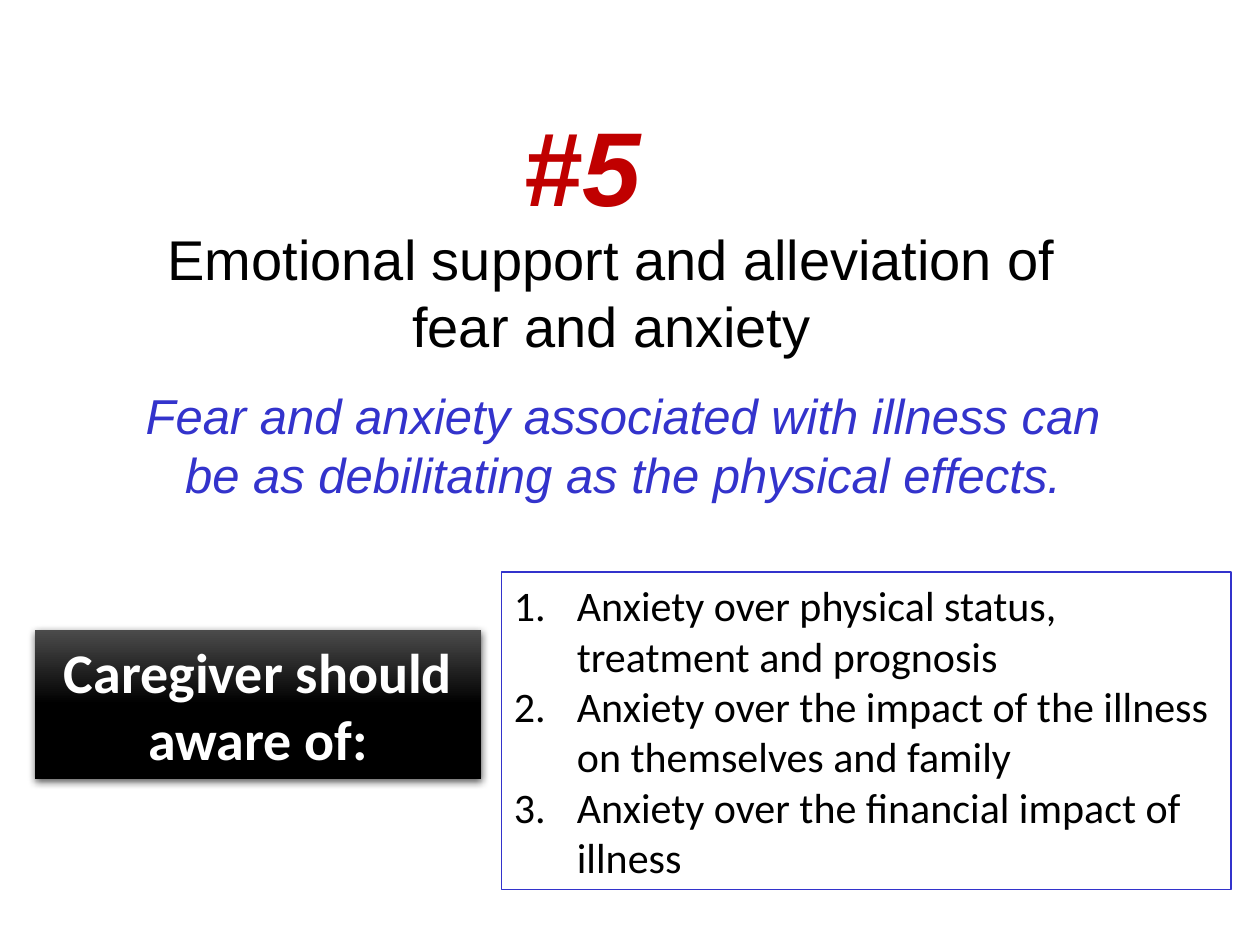
from lxml import etree
from pptx import Presentation
from pptx.dml.color import RGBColor
from pptx.enum.shapes import MSO_SHAPE
from pptx.enum.text import MSO_ANCHOR, PP_ALIGN
from pptx.oxml import parse_xml
from pptx.oxml.ns import nsdecls, qn
from pptx.util import Inches, Pt

BLACK = RGBColor(0x00, 0x00, 0x00)
GRAY = RGBColor(0x4B, 0x4B, 0x4B)
WHITE = RGBColor(0xFF, 0xFF, 0xFF)
RED = RGBColor(0xC0, 0x00, 0x00)
BLUE = RGBColor(0x33, 0x33, 0xCC)

CENTER, LEFT = PP_ALIGN.CENTER, PP_ALIGN.LEFT

# Place (left, top, width, height), text, alignment, font
TEXTS = [
    ((0.8, 1.73, 8.11, 1.18),
     "Emotional support and alleviation of fear and anxiety",
     CENTER, dict(name="Arial", size=Pt(32)), BLACK),
    ((4.06, 0.76, 1.89, 1.11), "#5",
     LEFT, dict(name="Arial", size=Pt(60), bold=True, italic=True), RED),
    ((0.98, 3.01, 7.93, 1.04),
     "Fear and anxiety associated with illness can be as debilitating "
     "as the physical effects.",
     CENTER, dict(name="Arial", size=Pt(28), italic=True), BLUE),
]
LABEL = "Caregiver should aware of:"
LABEL_AT = (0.28, 5, 3.54, 1.18)
LABEL_FONT = dict(name="Calibri", size=Pt(32), bold=True)
WORRIES = [
    "Anxiety over physical status, treatment and prognosis",
    "Anxiety over the impact of the illness on themselves and family",
    "Anxiety over the financial impact of illness",
]
LIST_AT = (3.98, 4.54, 5.79, 2.52)
LIST_FONT = dict(name="Calibri", size=Pt(24))
INDENT = Inches(0.5)


def write(shape, lines, align, style, color, numbered=False):
    frame = shape.text_frame
    frame.word_wrap = True
    for i, line in enumerate(lines):
        para = frame.paragraphs[0] if i == 0 else frame.add_paragraph()
        para.alignment = align
        if numbered:
            props = para._p.get_or_add_pPr()
            props.set("marL", str(INDENT))
            props.set("indent", str(-INDENT))
            etree.SubElement(props, qn("a:buFont"), typeface="+mj-lt")
            etree.SubElement(props, qn("a:buAutoNum"), type="arabicPeriod")
        run = para.add_run()
        run.text = line
        for key, value in style.items():
            setattr(run.font, key, value)
        run.font.color.rgb = color


def add_box(slide, place):
    box = slide.shapes.add_shape(MSO_SHAPE.RECTANGLE, *map(Inches, place))
    box.shadow.inherit = False
    box.text_frame.vertical_anchor = MSO_ANCHOR.MIDDLE
    return box


def drop_shadow(shape):
    effects = shape._element.spPr.find(qn("a:effectLst"))
    effects.append(parse_xml(
        f'<a:outerShdw {nsdecls("a")} blurRad="{Pt(4.5)}" dist="{Pt(1.5)}" '
        'dir="5400000" rotWithShape="0"><a:srgbClr val="000000">'
        '<a:alpha val="63000"/></a:srgbClr></a:outerShdw>'))


prs = Presentation()
prs.slide_width, prs.slide_height = Inches(10), Inches(7.5)
slide = prs.slides.add_slide(prs.slide_layouts[6])

for place, text, align, style, color in TEXTS:
    box = slide.shapes.add_textbox(*map(Inches, place))
    write(box, [text], align, style, color)

label = add_box(slide, LABEL_AT)
label.fill.gradient()
label.fill.gradient_angle = 270
for stop, spot, color in zip(label.fill.gradient_stops, (0, 0.5), (GRAY, BLACK)):
    stop.position = spot
    stop.color.rgb = color
label.line.fill.background()
drop_shadow(label)
write(label, [LABEL], CENTER, LABEL_FONT, WHITE)

panel = add_box(slide, LIST_AT)
panel.fill.solid()
panel.fill.fore_color.rgb = WHITE
panel.line.color.rgb = BLUE
panel.line.width = Pt(1)
write(panel, WORRIES, LEFT, LIST_FONT, BLACK, numbered=True)

prs.save("out.pptx")
